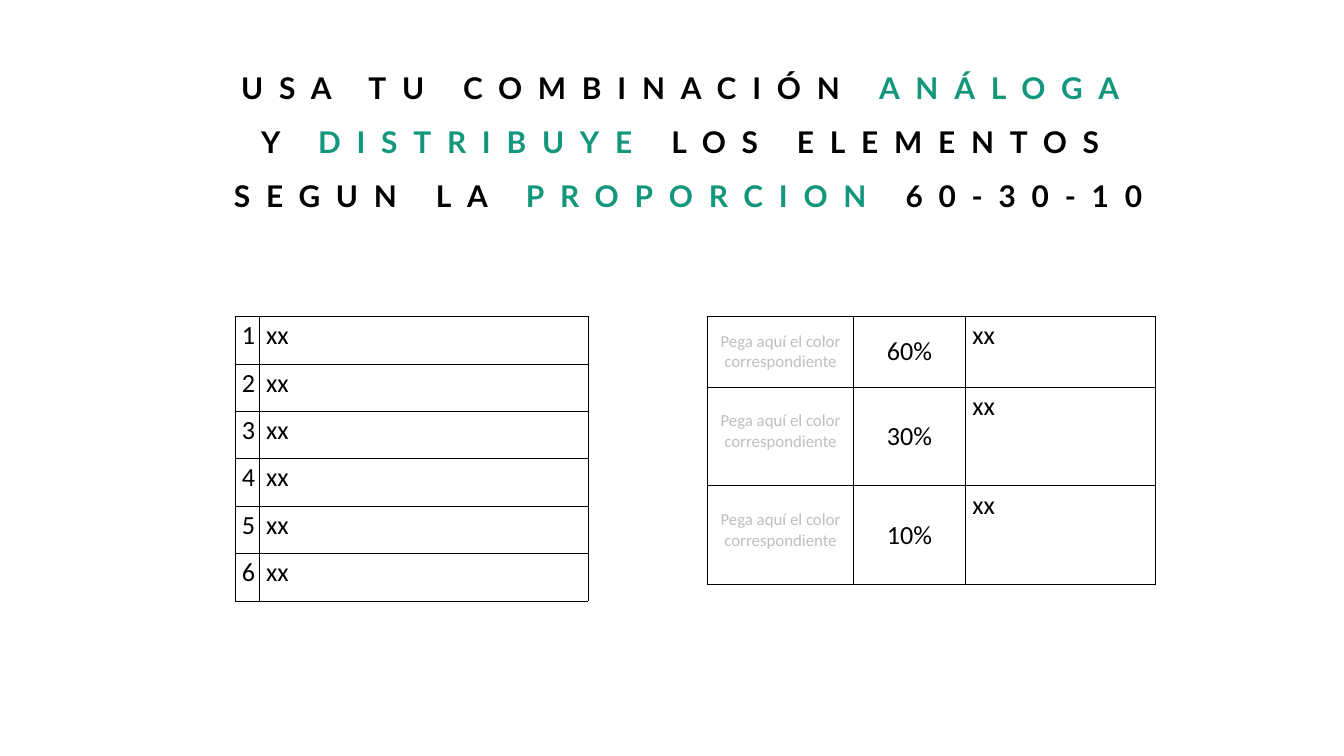
import dataclasses

import lxml.etree
import pptx
import pptx.dml.color
import pptx.enum.text
import pptx.oxml.ns
import pptx.util

Pt = pptx.util.Pt
Align = pptx.enum.text.PP_ALIGN
Anchor = pptx.enum.text.MSO_ANCHOR


@dataclasses.dataclass
class Theme:
    ink: str = "000000"
    accent: str = "12967C"
    hint: str = "BFBFBF"
    title_font: str = "Lato"
    body_font: str = "Calibri"
    title_size: int = 32
    body_size: int = 28
    hint_size: int = 18


theme = Theme()


def style_run(run, font, size, color, bold=False):
    run.font.name = font
    run.font.size = Pt(size)
    run.font.bold = bold
    run.font.color.rgb = pptx.dml.color.RGBColor.from_string(color)


def add_grid(slide, left, top, widths, heights):
    """Add an unfilled table with 1 pt borders and return it."""
    table = slide.shapes.add_table(
        len(heights), len(widths), Pt(left), Pt(top), Pt(sum(widths)), Pt(sum(heights))
    ).table
    table.first_row = table.horz_banding = False
    for column, width in zip(table.columns, widths):
        column.width = Pt(width)
    for row, height in zip(table.rows, heights):
        row.height = Pt(height)
    qn = pptx.oxml.ns.qn
    for cell in table.iter_cells():
        properties = cell._tc.get_or_add_tcPr()
        for side in ("a:lnL", "a:lnR", "a:lnT", "a:lnB"):
            line = lxml.etree.SubElement(properties, qn(side), w=str(Pt(1)))
            fill = lxml.etree.SubElement(line, qn("a:solidFill"))
            lxml.etree.SubElement(fill, qn("a:srgbClr"), val=theme.ink)
        cell.fill.background()
    return table


presentation = pptx.Presentation()
presentation.slide_width = Pt(1440)
presentation.slide_height = Pt(810)
slide = presentation.slides.add_slide(presentation.slide_layouts[5])

# Title with highlighted words
title = slide.shapes.title
title.left, title.top, title.width, title.height = Pt(236.9), Pt(55.4), Pt(1000.8), Pt(168.5)
frame = title.text_frame
frame.word_wrap = True
frame.auto_size = pptx.enum.text.MSO_AUTO_SIZE.NONE
frame.vertical_anchor = Anchor.TOP
frame.margin_left = frame.margin_right = frame.margin_top = frame.margin_bottom = 0
paragraph = frame.paragraphs[0]
paragraph.alignment = Align.CENTER
paragraph.line_spacing = Pt(57.9)
title_parts = [
    ("USA TU COMBINACIÓN ", theme.ink),
    ("ANÁLOGA", theme.accent),
    (" Y ", theme.ink),
    ("DISTRIBUYE", theme.accent),
    (" LOS ELEMENTOS SEGUN LA ", theme.ink),
    ("PROPORCION", theme.accent),
    (" 60-30-10", theme.ink),
]
for text, color in title_parts:
    run = paragraph.add_run()
    run.text = text
    style_run(run, theme.title_font, theme.title_size, color, bold=True)
    run.font._element.set("spc", "1690")

# Numbered list of elements
table_top = 339.1
elements = add_grid(slide, 252, table_top, [25.9, 352.1], [50.8] * 6)
for index in range(6):
    for cell, text in zip(elements.rows[index].cells, (str(index + 1), "xx")):
        cell.text = text
        style_run(cell.text_frame.paragraphs[0].runs[0],
                  theme.body_font, theme.body_size, theme.ink)

# Colour proportions
proportions = add_grid(slide, 758.2, table_top, [156.2, 120.2, 203.8], [75.6, 105.8, 105.8])
for index, share in enumerate(("60%", "30%", "10%")):
    cells = proportions.rows[index].cells
    contents = [
        ("Pega aquí el color correspondiente", theme.hint_size, theme.hint),
        (share, theme.body_size, theme.ink),
        ("xx", theme.body_size, theme.ink),
    ]
    for cell, (text, size, color) in zip(cells, contents):
        cell.text = text
        style_run(cell.text_frame.paragraphs[0].runs[0], theme.body_font, size, color)
    for cell in cells[0], cells[1]:
        cell.vertical_anchor = Anchor.MIDDLE
        cell.text_frame.paragraphs[0].alignment = Align.CENTER
    # The taller rows carry the hint one line below the top
    if index > 0:
        cells[0].vertical_anchor = Anchor.TOP
        cells[0].margin_top = Pt(25.6)

presentation.save("out.pptx")
